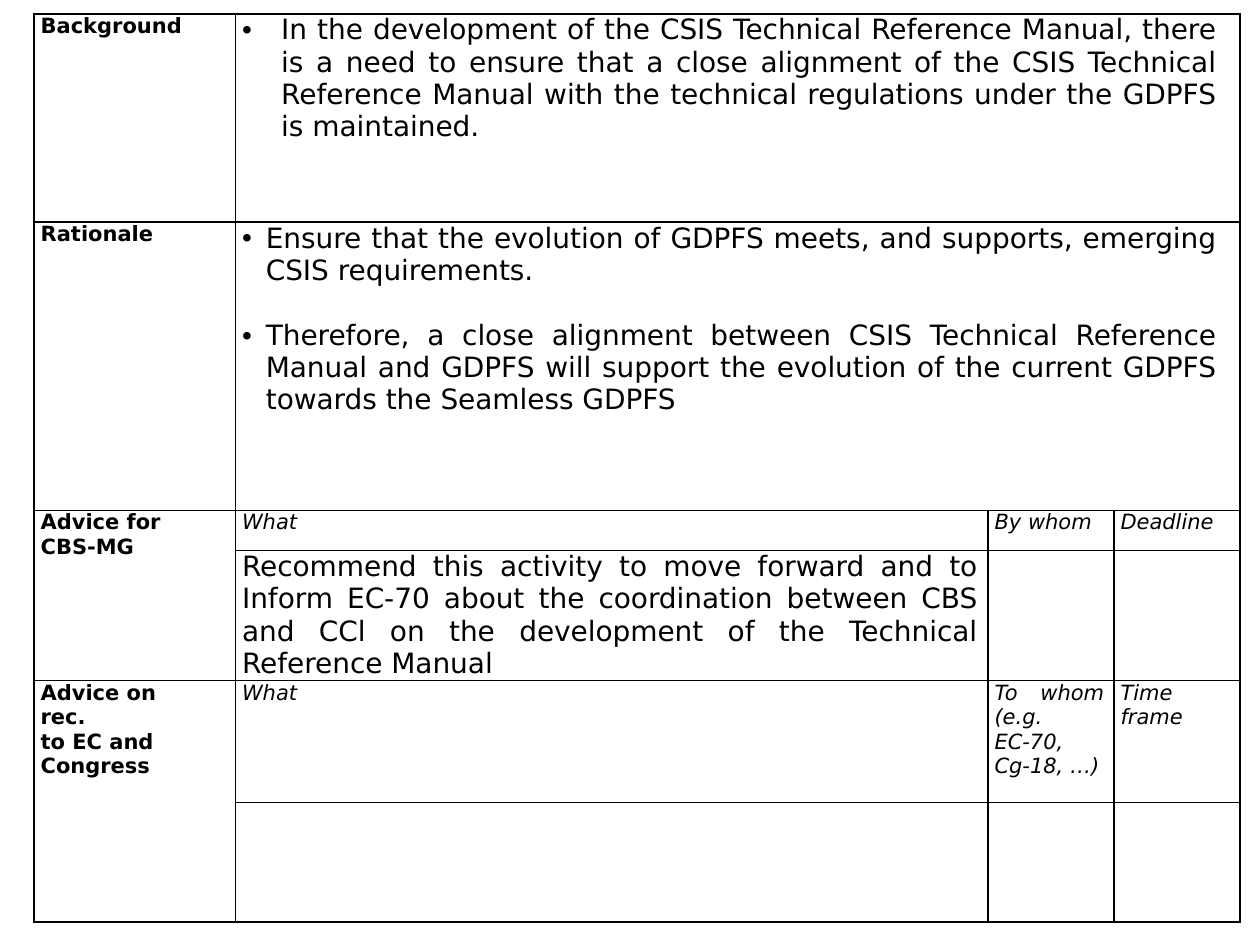
import pptx
import pptx.dml.color
import pptx.enum.text
import pptx.oxml
import pptx.oxml.ns
import pptx.util
from pptx.util import Cm

BLACK = pptx.dml.color.RGBColor(0, 0, 0)
WHITE = pptx.dml.color.RGBColor(255, 255, 255)
FONT = "DejaVu Sans"
JUSTIFY = pptx.enum.text.PP_ALIGN.JUSTIFY
NAMESPACE = pptx.oxml.ns.nsdecls("a")

COLUMN_WIDTHS = [4.06, 15.17, 2.54, 2.54]
ROW_HEIGHTS = [4.2, 5.81, 0.81, 2.62, 2.46, 2.41]
# first row, first column, last row, last column
MERGES = [(0, 1, 0, 3), (1, 1, 1, 3), (2, 0, 3, 0), (4, 0, 5, 0)]

LABELS = {
    0: ["Background"],
    1: ["Rationale"],
    2: ["Advice for", "CBS-MG"],
    4: ["Advice on rec.", "to EC and", "Congress"],
}
HEADINGS = {
    2: ["What", "By whom", "Deadline"],
    4: ["What", "To whom (e.g. EC-70, Cg-18, …)", "Time frame"],
}
BACKGROUND = [
    "In the development of the CSIS Technical Reference Manual, there is a need to ensure "
    "that a close alignment of the CSIS Technical Reference Manual with the technical "
    "regulations under the GDPFS is maintained.",
]
RATIONALE = [
    "Ensure that the evolution of GDPFS meets, and supports, emerging CSIS requirements.",
    "Therefore, a close alignment between CSIS Technical Reference Manual and GDPFS will "
    "support the evolution of the current GDPFS towards the Seamless GDPFS",
]
RECOMMENDATION = [
    "Recommend this activity to move forward and to Inform EC-70 about the coordination "
    "between CBS and CCl on the development of the Technical Reference Manual",
]


def write_cell(cell, lines, size, bold=False, italic=False, alignment=None,
               bullet_indent=None, gap=0, right=0.2):
    """Write one paragraph per line; indent and right margin in cm, gap in points."""
    cell.margin_right = Cm(right)
    for index, line in enumerate(lines):
        frame = cell.text_frame
        paragraph = frame.add_paragraph() if index else frame.paragraphs[0]
        if alignment is not None:
            paragraph.alignment = alignment
        if index and gap:
            paragraph.space_before = pptx.util.Pt(gap)
        if bullet_indent:
            properties = paragraph._p.get_or_add_pPr()
            properties.set("marL", str(Cm(bullet_indent)))
            properties.set("indent", str(-Cm(bullet_indent)))
            for tag in ('buFont %s typeface="Arial"', 'buChar %s char="•"'):
                properties.append(pptx.oxml.parse_xml(f"<a:{tag % NAMESPACE}/>"))
        run = paragraph.add_run()
        run.text = line
        run.font.name = FONT
        run.font.size = pptx.util.Pt(size)
        run.font.bold = bold
        run.font.italic = italic
        run.font.color.rgb = BLACK


presentation = pptx.Presentation()
presentation.slide_width = Cm(25.4)
presentation.slide_height = Cm(19.05)
slide = presentation.slides.add_slide(presentation.slide_layouts[6])

shape = slide.shapes.add_table(
    len(ROW_HEIGHTS), len(COLUMN_WIDTHS), Cm(0.69), Cm(0.28),
    Cm(sum(COLUMN_WIDTHS)), Cm(sum(ROW_HEIGHTS)))
table = shape.table
table.first_row = False
table.horz_banding = False
for column, width in zip(table.columns, COLUMN_WIDTHS):
    column.width = Cm(width)
for row, height in zip(table.rows, ROW_HEIGHTS):
    row.height = Cm(height)

for cell in table.iter_cells():
    cell.margin_left = cell.margin_right = Cm(0.13)
    cell.margin_top = cell.margin_bottom = 0
    properties = cell._tc.get_or_add_tcPr()
    for side in ("lnL", "lnR", "lnT", "lnB"):
        properties.append(pptx.oxml.parse_xml(
            f'<a:{side} {NAMESPACE} w="12700"><a:solidFill>'
            f'<a:srgbClr val="{BLACK}"/></a:solidFill></a:{side}>'))
    cell.fill.solid()
    cell.fill.fore_color.rgb = WHITE

for top, left, bottom, right in MERGES:
    table.cell(top, left).merge(table.cell(bottom, right))

for row, lines in LABELS.items():
    write_cell(table.cell(row, 0), lines, 12, bold=True, right=0.9)
for row, headings in HEADINGS.items():
    for column, heading in enumerate(headings, start=1):
        write_cell(table.cell(row, column), [heading], 12, italic=True, alignment=JUSTIFY)

write_cell(table.cell(0, 1), BACKGROUND, 16, alignment=JUSTIFY, bullet_indent=0.79, right=0.46)
write_cell(table.cell(1, 1), RATIONALE, 16, alignment=JUSTIFY, bullet_indent=0.48,
           gap=18.5, right=0.46)
write_cell(table.cell(3, 1), RECOMMENDATION, 16, alignment=JUSTIFY)

presentation.save("out.pptx")
